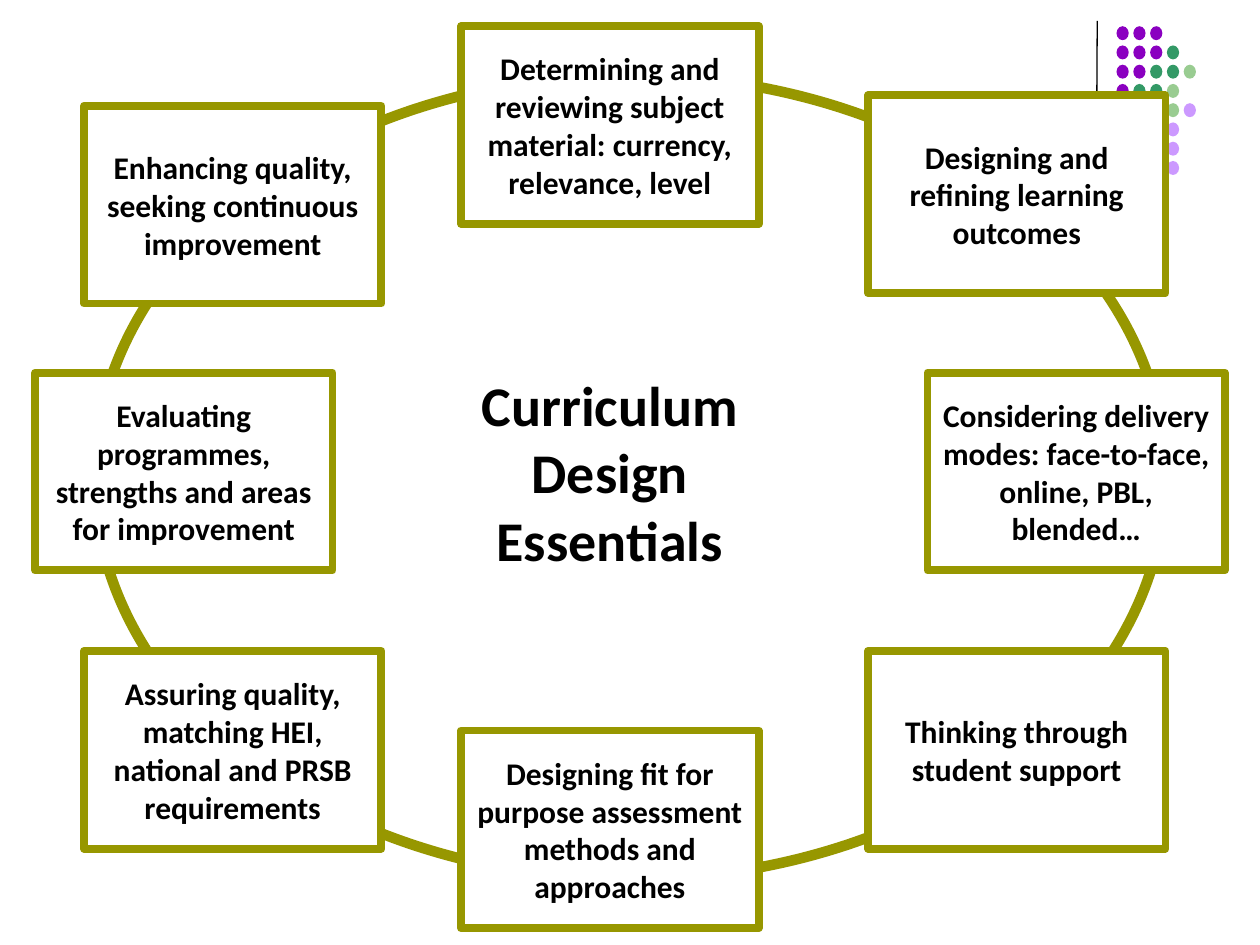
from pptx import Presentation
from pptx.dml.color import RGBColor
from pptx.enum.shapes import MSO_CONNECTOR as Connector, MSO_SHAPE as Shape
from pptx.enum.text import MSO_ANCHOR as Anchor, MSO_AUTO_SIZE as AutoSize, PP_ALIGN as Align
from pptx.oxml.ns import qn
from pptx.util import Pt
from lxml.etree import SubElement

BLACK = RGBColor(0x00, 0x00, 0x00)
WHITE = RGBColor(0xFF, 0xFF, 0xFF)
OLIVE = RGBColor(0x97, 0x97, 0x00)
PURPLE = RGBColor(0x8A, 0x00, 0xC0)
GREEN = RGBColor(0x33, 0x99, 0x66)
LIGHT_GREEN = RGBColor(0x99, 0xCC, 0x91)
LILAC = RGBColor(0xCC, 0x99, 0xFF)

BOX_WIDTH, BOX_HEIGHT = 170, 113
CENTRE_LEFT, MIDDLE_TOP = 263.5, 213

# Left, top and wording of each step around the ring
STEPS = [
    (20, MIDDLE_TOP, "Evaluating programmes, strengths and areas for improvement"),
    (530, MIDDLE_TOP, "Considering delivery modes: face-to-face, online, PBL, blended…"),
    (CENTRE_LEFT, 15, "Determining and reviewing subject material: currency, relevance, level"),
    (CENTRE_LEFT, 417.5, "Designing fit for purpose assessment methods and approaches"),
    (48, 60.5, "Enhancing quality, seeking continuous improvement"),
    (496, 54.5, "Designing and refining learning outcomes"),
    (48, 372, "Assuring quality, matching HEI, national and PRSB requirements"),
    (496, 372, "Thinking through student support"),
]

# Corner dots, one letter per dot, "." for a gap
DOT_ROWS = ["PPP", "PPPG", "PPGGL", "PGGL", "...LV", "...V", "...V", "...V"]
DOT_COLOURS = {"P": PURPLE, "G": GREEN, "L": LIGHT_GREEN, "V": LILAC}


class Painter:
    font = "Calibri"

    def __init__(self, page):
        self.page = page

    def paint(self, shape, fill, line=None, weight=0):
        shape.fill.solid()
        shape.fill.fore_color.rgb = fill
        if line is None:
            shape.line.fill.background()
        else:
            shape.line.color.rgb = line
            shape.line.width = Pt(weight)

    def shape(self, kind, left, top, width, height, fill, line=None, weight=0):
        shape = self.page.shapes.add_shape(kind, Pt(left), Pt(top), Pt(width), Pt(height))
        shape.shadow.inherit = False
        self.paint(shape, fill, line, weight)
        return shape

    def label(self, shape, lines, size):
        frame = shape.text_frame
        frame.word_wrap = True
        frame.auto_size = AutoSize.NONE
        frame.vertical_anchor = Anchor.MIDDLE
        for index, line in enumerate(lines):
            para = frame.paragraphs[0] if index == 0 else frame.add_paragraph()
            para.alignment = Align.CENTER
            span = para.add_run()
            span.text = line
            span.font.name = self.font
            span.font.size = Pt(size)
            span.font.bold = True
            span.font.color.rgb = BLACK

    def step(self, left, top, text):
        box = self.shape(Shape.RECTANGLE, left, top, BOX_WIDTH, BOX_HEIGHT, WHITE, OLIVE, 4.5)
        self.label(box, [text], 18)

    def title(self, left, top, lines):
        title = self.page.shapes.title
        title.left, title.top = Pt(left), Pt(top)
        title.width, title.height = Pt(BOX_WIDTH), Pt(BOX_HEIGHT)
        self.paint(title, WHITE, WHITE, 4.5)
        self.label(title, lines, 32)
        # Bring the title in front of the ring
        title.element.getparent().append(title.element)

    def rule(self, x1, y1, x2, y2):
        rule = self.page.shapes.add_connector(Connector.STRAIGHT, Pt(x1), Pt(y1), Pt(x2), Pt(y2))
        rule.line.color.rgb = BLACK
        rule.line.width = Pt(0.75)
        SubElement(rule.element.spPr, qn("a:effectLst"))

    def dots(self, left, top, step_x, step_y):
        for row, letters in enumerate(DOT_ROWS):
            for column, letter in enumerate(letters):
                if letter in DOT_COLOURS:
                    self.shape(Shape.OVAL, left + column * step_x, top + row * step_y,
                               7, 8, DOT_COLOURS[letter])


def main():
    deck = Presentation()
    deck.slide_width, deck.slide_height = Pt(720), Pt(540)
    painter = Painter(deck.slides.add_slide(deck.slide_layouts[5]))

    # Corner decoration
    painter.rule(627, 12, 626.5, 106)
    painter.dots(638, 15, 9.6, 11)

    # Ring and its steps
    painter.shape(Shape.OVAL, 54, 43, 612, 459.5, WHITE, OLIVE, 6)
    for left, top, text in STEPS:
        painter.step(left, top, text)

    # Title in the middle
    painter.title(CENTRE_LEFT, MIDDLE_TOP, ["Curriculum", "Design", "Essentials"])
    deck.save("out.pptx")


if __name__ == "__main__":
    main()
